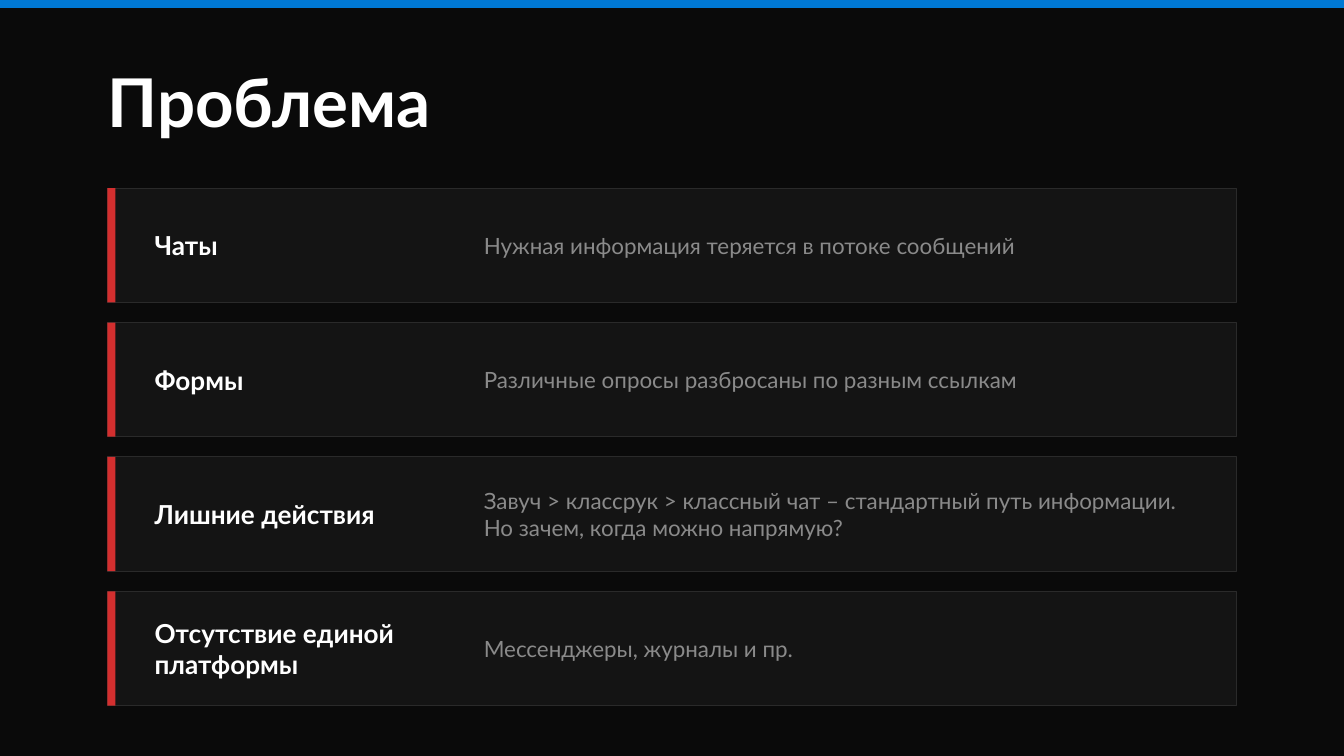
"""Build a dark slide that lists four problems as cards with a red edge."""
from pptx import Presentation
from pptx.dml.color import RGBColor
from pptx.enum.shapes import MSO_SHAPE
from pptx.enum.text import MSO_ANCHOR
from pptx.util import Pt

RECT = MSO_SHAPE.RECTANGLE
MIDDLE = MSO_ANCHOR.MIDDLE

THEME = {
    "font": "Lato",
    "back": RGBColor(0x0A, 0x0A, 0x0A),
    "bar": RGBColor(0x00, 0x78, 0xD4),
    "card": RGBColor(0x14, 0x14, 0x14),
    "line": RGBColor(0x2A, 0x2A, 0x2A),
    "edge": RGBColor(0xD3, 0x2F, 0x2F),
    "white": RGBColor(0xFF, 0xFF, 0xFF),
    "gray": RGBColor(0x8A, 0x8A, 0x8A),
    "title": Pt(36),
    "head": Pt(14),
    "body": Pt(12),
}

CARDS = [
    ("Чаты", "Нужная информация теряется в потоке сообщений"),
    ("Формы", "Различные опросы разбросаны по разным ссылкам"),
    ("Лишние действия",
     "Завуч > классрук > классный чат – стандартный путь информации. "
     "Но зачем, когда можно напрямую?"),
    ("Отсутствие единой платформы", "Мессенджеры, журналы и пр."),
]

WIDE = 720
LEFT = 57.6
TOP = 100.8
STEP = 72
HIGH = 61.2
EDGE = 4.32

deck = Presentation()
deck.slide_width = Pt(WIDE)
deck.slide_height = Pt(405)
slide = deck.slides.add_slide(deck.slide_layouts[6])
slide.background.fill.solid()
slide.background.fill.fore_color.rgb = THEME["back"]


def add_rect(x, y, w, h, fill, line=None):
    shape = slide.shapes.add_shape(RECT, Pt(x), Pt(y), Pt(w), Pt(h))
    shape.shadow.inherit = False
    shape.fill.solid()
    shape.fill.fore_color.rgb = THEME[fill]
    if line:
        shape.line.color.rgb = THEME[line]
        shape.line.width = Pt(0.5)
    else:
        shape.line.fill.background()


def add_text(x, y, w, h, text, size, color, bold=False):
    frame = slide.shapes.add_textbox(Pt(x), Pt(y), Pt(w), Pt(h)).text_frame
    frame.word_wrap = True
    frame.vertical_anchor = MIDDLE
    frame.margin_left = frame.margin_right = 0
    frame.margin_top = frame.margin_bottom = 0
    run = frame.paragraphs[0].add_run()
    run.text = text
    run.font.name = THEME["font"]
    run.font.size = THEME[size]
    run.font.bold = bold
    run.font.color.rgb = THEME[color]


add_rect(0, 0, WIDE, EDGE, "bar")
add_text(LEFT, 28.8, 648, 50.4, "Проблема", "title", "white", True)

for row, (head, body) in enumerate(CARDS):
    y = TOP + row * STEP
    add_rect(LEFT, y, WIDE - 2 * LEFT, HIGH, "card", "line")
    add_rect(LEFT, y, EDGE, HIGH, "edge")
    add_text(82.8, y, 180, HIGH, head, "head", "white", True)
    add_text(259.2, y, 388.8, HIGH, body, "body", "gray")

deck.save("out.pptx")
